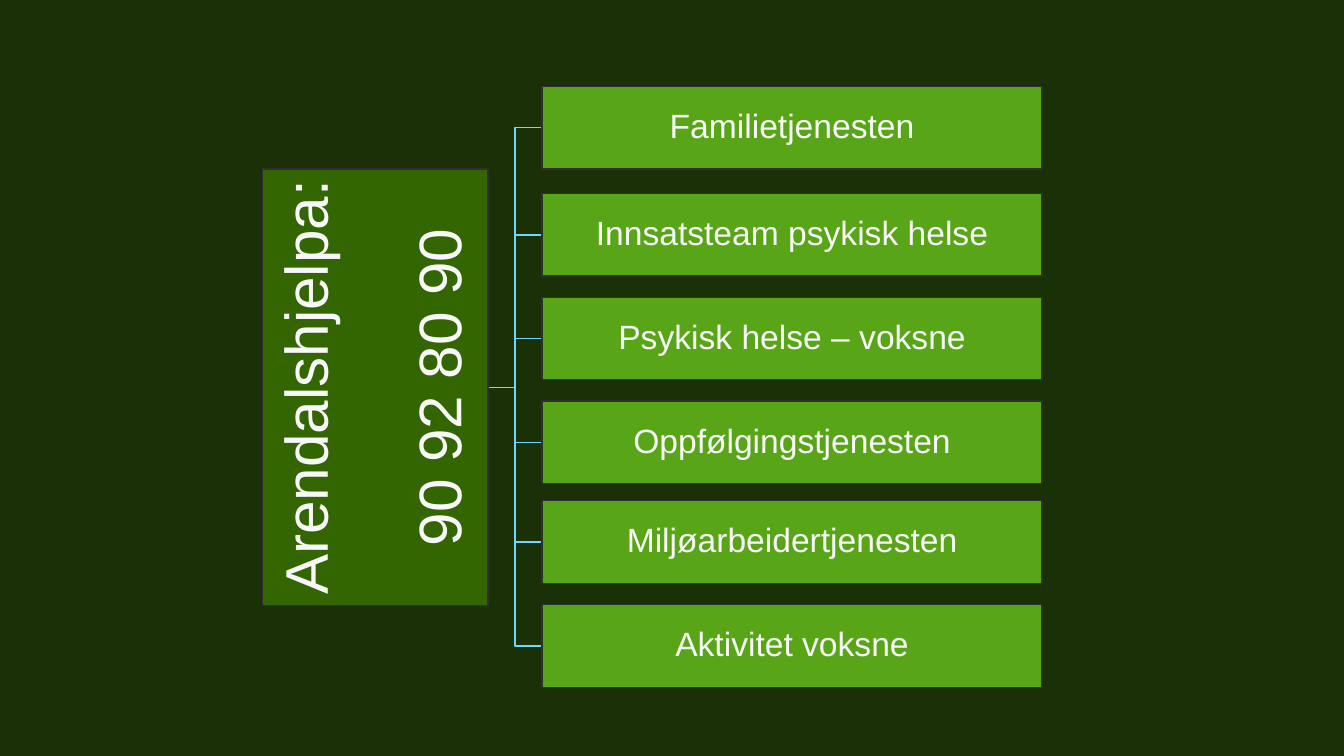
from dataclasses import dataclass

from lxml import etree
from pptx import Presentation
from pptx.dml.color import RGBColor
from pptx.enum.shapes import MSO_CONNECTOR as CONN, MSO_SHAPE as SHAPE
from pptx.enum.text import MSO_ANCHOR as ANCHOR, PP_ALIGN as ALIGN
from pptx.oxml.ns import qn
from pptx.util import Cm, Pt


@dataclass(frozen=True)
class Theme:
    background: str = "1A3107"
    helpline: str = "336600"
    service: str = "58A618"
    outline: str = "303030"
    branch: str = "71D6FF"
    text: str = "F8F8F8"
    font: str = "Arial"
    helpline_size: int = 43
    service_size: int = 24
    line_width: int = 1


THEME = Theme()
HELPLINE = ["Arendalshjelpa:", "90 92 80 90"]
SERVICES = [
    ("Familietjenesten", 0),
    ("Innsatsteam psykisk helse", 2.7),
    ("Psykisk helse – voksne", 5.31),
    ("Oppfølgingstjenesten", 7.93),
    ("Miljøarbeidertjenesten", 10.44),
    ("Aktivitet voksne", 13.06),
]


def rgb(value):
    return RGBColor.from_string(value)


def write_text(sp, lines, size, inset, gap=0):
    tf = sp.text_frame
    tf.word_wrap = True
    tf.vertical_anchor = ANCHOR.MIDDLE
    tf.margin_left = tf.margin_right = tf.margin_top = tf.margin_bottom = Cm(inset)
    for i, line in enumerate(lines):
        p = tf.add_paragraph() if i else tf.paragraphs[0]
        p.alignment = ALIGN.CENTER
        p.line_spacing = 0.9
        if i:
            p.space_before = Pt(gap)
        r = p.add_run()
        r.text = line
        r.font.name = THEME.font
        r.font.size = Pt(size)
        r.font.color.rgb = rgb(THEME.text)


def add_box(s, left, top, width, height, fill):
    sp = s.shapes.add_shape(SHAPE.RECTANGLE, Cm(left), Cm(top), Cm(width), Cm(height))
    sp.shadow.inherit = False
    sp.fill.solid()
    sp.fill.fore_color.rgb = rgb(fill)
    sp.line.color.rgb = rgb(THEME.outline)
    sp.line.width = Pt(THEME.line_width)
    return sp


def add_branch(s, x1, y1, x2, y2):
    branch = s.shapes.add_connector(CONN.ELBOW, Cm(x1), Cm(y1), Cm(x2), Cm(y2))
    branch.line.color.rgb = rgb(THEME.branch)
    branch.line.width = Pt(THEME.line_width)
    etree.SubElement(branch._element.spPr, qn("a:effectLst"))


def add_helpline(s, left, top, width, height):
    shift = (height - width) / 2
    sp = add_box(s, left - shift, top + shift, height, width, THEME.helpline)
    sp.rotation = 270
    write_text(sp, HELPLINE, THEME.helpline_size, inset=0.08, gap=49)


def add_service_tree(s, left, top, width):
    root_width, root_height = 5.69, 11
    service_width, service_height = 12.6, 2.08
    root_top = top + 2.08
    root_right, root_middle = left + root_width, root_top + root_height / 2
    service_left = left + width - service_width

    for _, offset in SERVICES:
        add_branch(s, root_right, root_middle,
                   service_left, top + offset + service_height / 2)
    add_helpline(s, left, root_top, root_width, root_height)
    for name, offset in SERVICES:
        sp = add_box(s, service_left, top + offset,
                     service_width, service_height, THEME.service)
        write_text(sp, [name], THEME.service_size, inset=0.05)


def main():
    prs = Presentation()
    prs.slide_width, prs.slide_height = Cm(33.87), Cm(19.05)
    s = prs.slides.add_slide(prs.slide_layouts[6])
    s.background.fill.solid()
    s.background.fill.fore_color.rgb = rgb(THEME.background)
    add_service_tree(s, left=6.61, top=2.18, width=19.65)
    prs.save("out.pptx")


if __name__ == "__main__":
    main()
